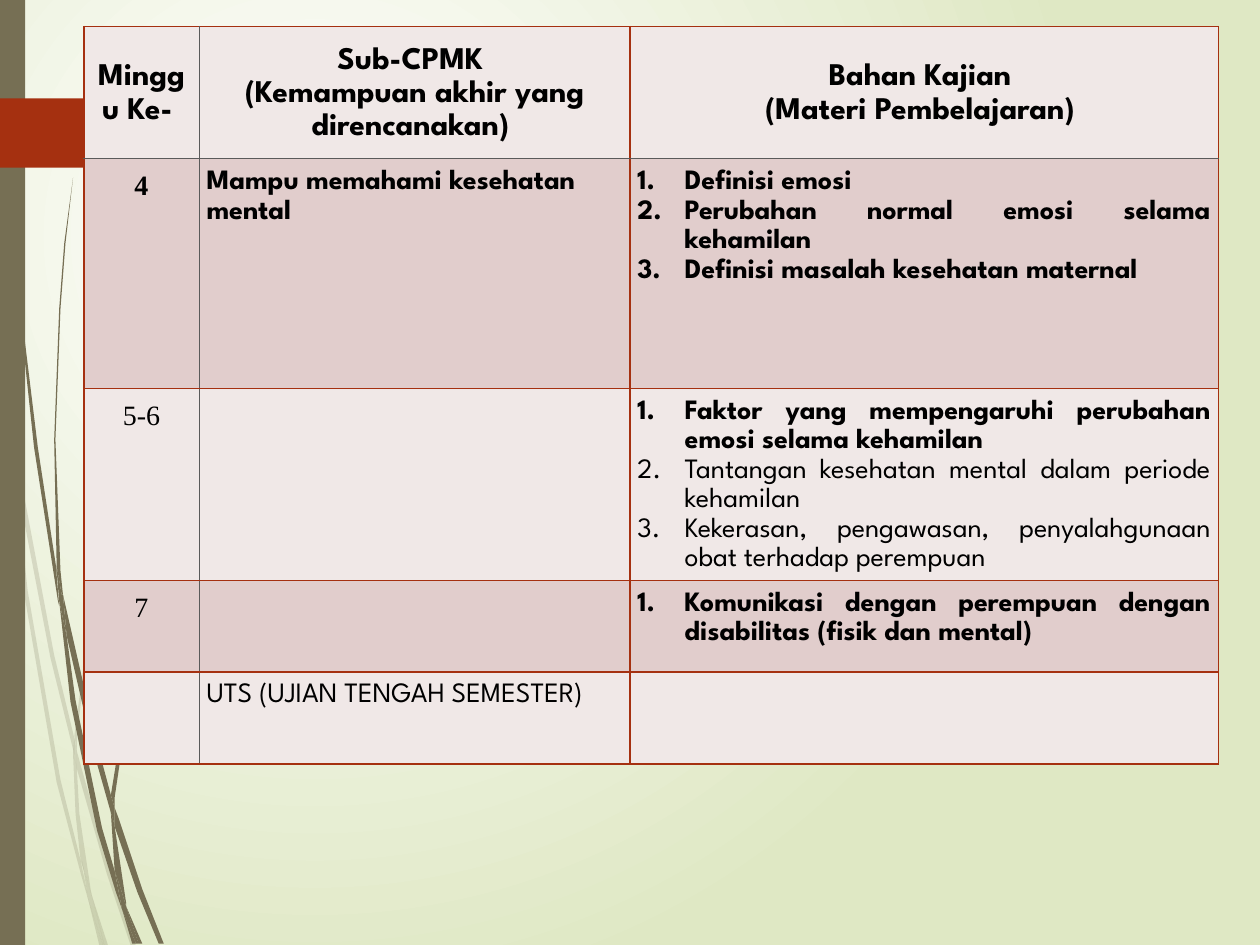
from dataclasses import dataclass
from typing import Optional

from lxml.etree import SubElement
from pptx import Presentation
from pptx.dml.color import RGBColor
from pptx.enum.shapes import MSO_SHAPE as SHAPE
from pptx.enum.text import MSO_ANCHOR as ANCHOR, PP_ALIGN as ALIGN
from pptx.oxml import parse_xml
from pptx.oxml.ns import nsdecls, qn
from pptx.util import Pt


@dataclass(frozen=True)
class Theme:
    olive: str = "766F54"
    red: str = "A53010"
    grey: str = "5A5A5A"
    light: str = "F0E8E7"
    dark: str = "E1CDCC"
    white: str = "FFFFFF"
    green: str = "DFE8C4"
    text: str = "000000"
    sans: str = "League Spartan"
    serif: str = "Times New Roman"
    head: float = 18
    body: float = 16


@dataclass(frozen=True)
class Para:
    text: str
    bold: bool = False
    numbered: bool = False


@dataclass(frozen=True)
class Row:
    height: float
    cells: tuple[tuple[Para, ...], ...]


@dataclass(frozen=True)
class Blade:
    down: tuple[tuple[int, int], ...]
    up: tuple[tuple[int, int], ...]


T = Theme()
GRID = Pt(0.72)
COLS = (65.9, 246.2, 336.2)


def head(*lines: str) -> tuple[Para, ...]:
    return tuple(Para(line, True) for line in lines)


def item(text: str, bold: bool = True) -> Para:
    return Para(text, bold, True)


ROWS = (
    Row(75.6, (head("Minggu Ke- "),
               head("Sub-CPMK ", "(Kemampuan akhir yang direncanakan) "),
               head("Bahan Kajian ", "(Materi Pembelajaran) "))),
    Row(131.2, (head("4"), head("Mampu memahami kesehatan mental"),
                (item("Definisi emosi"),
                 item("Perubahan normal emosi selama kehamilan"),
                 item("Definisi masalah kesehatan maternal")))),
    Row(52.5, ((Para("5-6"),), (),
               (item("Faktor yang mempengaruhi perubahan emosi selama kehamilan"),
                item("Tantangan kesehatan mental dalam periode kehamilan", False),
                item("Kekerasan, pengawasan, penyalahgunaan obat terhadap perempuan", False)))),
    Row(52.5, ((Para("7"),), (),
               (item("Komunikasi dengan perempuan dengan disabilitas (fisik dan mental) "),))),
    Row(52.5, ((), (Para("UTS (UJIAN TENGAH SEMESTER)"),), ())),
)

PALE = (
    Blade(((0, 299), (7, 344), (8, 350)), ((6, 322), (0, 282))),
    Blade(((10, 345), (12, 376), (40, 522), (59, 599)), ((59, 586), (43, 520))),
    Blade(((61, 596), (61, 610), (85, 694), (104, 751)), ((108, 751), (88, 692), (64, 607))),
    Blade(((73, 711), (83, 751)), ((86, 751),)),
    Blade(((8, 350), (19, 470), (45, 621), (64, 693), (70, 714)),
          ((69, 707), (64, 683), (48, 619), (22, 469), (12, 376))),
    Blade(((58, 599), (60, 646), (64, 683), (67, 692), (73, 711)),
          ((72, 706), (63, 646), (61, 610), (61, 608))),
    Blade(((217, 153), (201, 175), (186, 197), (158, 244), (110, 348), (75, 461), (59, 584), (61, 596)),
          ((61, 584), (76, 462), (111, 349), (159, 245), (187, 198), (201, 175), (217, 154))),
    Blade(((70, 714), (79, 751)), ((82, 751),)),
    Blade(((59, 586), (58, 599), (61, 608)), ((61, 610), (61, 596))),
    Blade(((65, 683), (69, 707), (70, 714), (82, 751)), ((83, 751), (73, 711), (67, 692))),
)
BOLD = (
    Blade(((2, 0), (3, 48), (5, 110), (14, 233), (27, 355), (46, 477), (47, 481)),
          ((45, 457), (45, 453), (30, 355), (15, 232), (6, 109), (4, 48), (3, 0))),
    Blade(((50, 472), (53, 505), (73, 592), (88, 645)), ((88, 633), (88, 631), (77, 590))),
    Blade(((91, 641), (91, 656), (109, 708), (126, 749)), ((130, 749), (113, 706), (94, 649))),
    Blade(((47, 477), (56, 557), (77, 659), (92, 708), (97, 722)),
          ((96, 717), (91, 691), (81, 657), (60, 556), (53, 505))),
    Blade(((58, 141), (51, 193), (47, 245), (43, 349), (45, 449), (49, 472)),
          ((50, 472), (48, 453), (44, 349), (48, 245), (52, 193))),
    Blade(((100, 719), (110, 749)), ((113, 749),)),
    Blade(((45, 449), (45, 453), (47, 477), (53, 505)), ((50, 472), (49, 472))),
    Blade(((215, 344), (203, 358), (191, 373), (168, 405), (129, 474), (101, 551), (88, 631), (91, 641)),
          ((91, 633), (103, 552), (131, 476), (169, 406), (191, 374), (203, 359), (216, 344))),
    Blade(((97, 722), (105, 749)), ((108, 749),)),
    Blade(((88, 645), (91, 691), (96, 706), (100, 719)), ((100, 716), (91, 656), (90, 651))),
    Blade(((88, 631), (88, 633), (88, 645), (90, 651)), ((91, 656), (91, 641))),
    Blade(((91, 691), (96, 717), (97, 722), (108, 749)), ((110, 749), (100, 719), (96, 706))),
)
ARROW = ((0, 78), (121, 78), (124, 79), (149, 104), (149, 107), (124, 132), (121, 133), (0, 133))


def paint(sp, color: str, alpha: Optional[int] = None) -> None:
    sp.shadow.inherit = False
    sp.line.fill.background()
    sp.fill.solid()
    sp.fill.fore_color.rgb = RGBColor.from_string(color)
    if alpha:
        clr = sp.fill._xPr.find(qn("a:solidFill"))[0]
        SubElement(clr, qn("a:alpha"), val=str(alpha * 1000))


def outline(s, pts: tuple, color: str, alpha: Optional[int] = None) -> None:
    scaled = [(x * GRID, y * GRID) for x, y in pts]
    fb = s.shapes.build_freeform(*scaled[0])
    fb.add_line_segments(scaled[1:], close=True)
    paint(fb.convert_to_shape(), color, alpha)


def set_background(s) -> None:
    fill = s.background.fill
    fill.gradient()
    for stop, color in zip(fill.gradient_stops, (T.white, T.green)):
        stop.color.rgb = RGBColor.from_string(color)
    grad = s.background._cSld.find(".//" + qn("a:gradFill"))
    grad.replace(grad.find(qn("a:lin")), parse_xml(
        f'<a:path {nsdecls("a")} path="circle">'
        '<a:fillToRect l="50000" t="50000" r="100000" b="100000"/></a:path>'))


def set_borders(cell, row: int, col: int) -> None:
    thin = {"L": col == 1, "R": col == 0, "T": row == 1, "B": row == 0}
    tcPr = cell._tc.get_or_add_tcPr()
    for i, (side, is_thin) in enumerate(thin.items()):
        color, width = (T.grey, Pt(0.5)) if is_thin else (T.red, Pt(1))
        tcPr.insert(i, parse_xml(
            f'<a:ln{side} {nsdecls("a")} w="{width}"><a:solidFill>'
            f'<a:srgbClr val="{color}"/></a:solidFill></a:ln{side}>'))


def fill_cell(cell, paras: tuple[Para, ...], row: int, col: int) -> None:
    cell.fill.solid()
    cell.fill.fore_color.rgb = RGBColor.from_string(T.dark if row % 2 else T.light)
    set_borders(cell, row, col)
    cell.margin_left = cell.margin_right = cell.margin_top = cell.margin_bottom = Pt(4.3)
    cell.vertical_anchor = ANCHOR.TOP if row else ANCHOR.MIDDLE
    tf = cell.text_frame
    for i, para in enumerate(paras):
        p = tf.add_paragraph() if i else tf.paragraphs[0]
        p.text = para.text
        p.line_spacing = 1.15
        p.alignment = ALIGN.CENTER if row == 0 or col == 0 else ALIGN.LEFT
        if para.numbered:
            p.alignment = ALIGN.JUSTIFY
            pPr = p._p.get_or_add_pPr()
            pPr.set("marL", str(Pt(27)))
            pPr.set("indent", str(-Pt(27)))
            SubElement(pPr, qn("a:buFont"), typeface="+mj-lt")
            SubElement(pPr, qn("a:buAutoNum"), type="arabicPeriod")
        f = p.runs[0].font
        f.name = T.serif if row and col == 0 else T.sans
        f.size = Pt(T.body if row else T.head)
        f.bold = para.bold
        f.color.rgb = RGBColor.from_string(T.text)


def add_schedule(s) -> None:
    height = sum(row.height for row in ROWS)
    tbl = s.shapes.add_table(len(ROWS), len(COLS), Pt(47.9), Pt(15.2),
                             Pt(sum(COLS)), Pt(height)).table
    tbl.first_row = tbl.horz_banding = False
    for c, width in enumerate(COLS):
        tbl.columns[c].width = Pt(width)
    for r, row in enumerate(ROWS):
        tbl.rows[r].height = Pt(row.height)
        for c, paras in enumerate(row.cells):
            fill_cell(tbl.cell(r, c), paras, r, c)


def main() -> None:
    prs = Presentation()
    prs.slide_width, prs.slide_height = Pt(720), Pt(540)
    s = prs.slides.add_slide(prs.slide_layouts[6])
    set_background(s)
    for blades, alpha in ((PALE, 20), (BOLD, None)):
        for blade in blades:
            outline(s, blade.down + blade.up, T.olive, alpha)
    paint(s.shapes.add_shape(SHAPE.RECTANGLE, 0, 0, Pt(14.4), Pt(540)), T.olive)
    outline(s, ARROW, T.red)
    add_schedule(s)
    prs.save("out.pptx")


if __name__ == "__main__":
    main()
